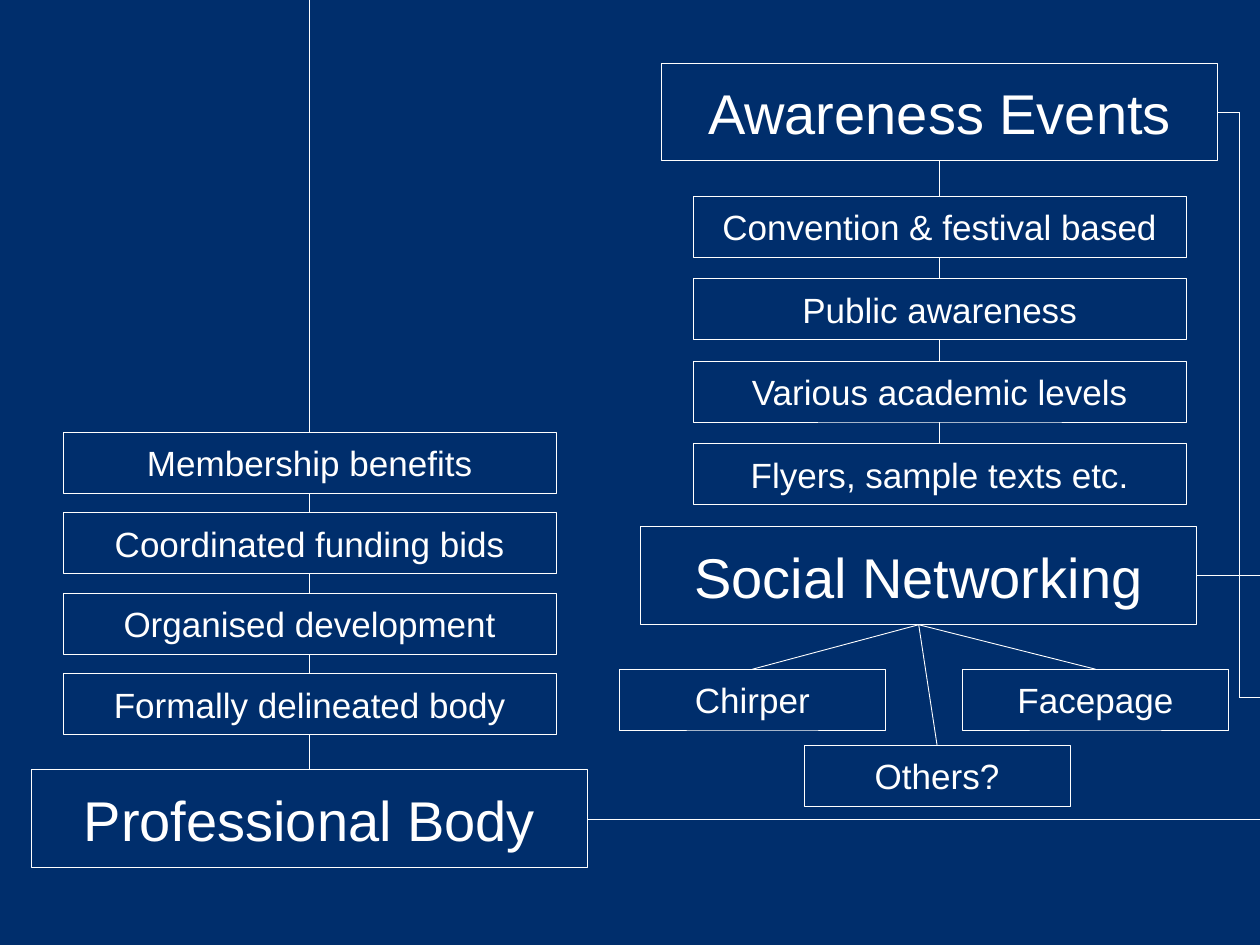
from pptx import Presentation
from pptx.dml.color import RGBColor
from pptx.enum.shapes import MSO_CONNECTOR, MSO_SHAPE
from pptx.enum.text import MSO_ANCHOR, PP_ALIGN
from pptx.oxml.ns import qn
from pptx.util import Pt
from lxml import etree

RECTANGLE = MSO_SHAPE.RECTANGLE
STRAIGHT = MSO_CONNECTOR.STRAIGHT
MIDDLE = MSO_ANCHOR.MIDDLE
CENTER = PP_ALIGN.CENTER

COLORS = {"background": "002E6C", "foreground": "FFFFFF"}
FONT = "Arial"
LINE_WIDTH = 0.5
SLIDE_WIDTH, SLIDE_HEIGHT = 720, 540
HEADING = {"width": 318, "height": 56, "size": 32}
ITEM = {"width": 282, "height": 34.8, "size": 20}
NETWORK = {"width": 152, "height": 34.8, "size": 20}
TOP_SITE, BOTTOM_SITE = 0, 2

PROFESSIONAL = ("Professional Body", 18, 440)
AWARENESS = ("Awareness Events", 378, 36)
SOCIAL = ("Social Networking", 366, 301)

BENEFITS = {
    "left": 36, "top": 247, "pitch": 46,
    "items": ["Membership benefits", "Coordinated funding bids",
              "Organised development", "Formally delineated body"],
}
EVENTS = {
    "left": 396, "top": 112.2, "pitch": 47.1,
    "items": ["Convention & festival based", "Public awareness",
              "Various academic levels", "Flyers, sample texts etc."],
}
NETWORKS = [("Chirper", 354, 382.4), ("Facepage", 550, 382.4), ("Others?", 459.5, 426)]

BRANCH_X, BRANCH_Y = 708, 398.4


def color(name):
    return RGBColor.from_string(COLORS[name])


def add_box(slide, text, left, top, style):
    shape = slide.shapes.add_shape(
        RECTANGLE, Pt(left), Pt(top), Pt(style["width"]), Pt(style["height"]))
    shape.shadow.inherit = False
    shape.fill.background()
    shape.line.color.rgb = color("foreground")
    shape.line.width = Pt(LINE_WIDTH)
    text_frame = shape.text_frame
    text_frame.text = text
    text_frame.word_wrap = True
    text_frame.vertical_anchor = MIDDLE
    paragraph = text_frame.paragraphs[0]
    paragraph.alignment = CENTER
    font = paragraph.runs[0].font
    font.name = FONT
    font.size = Pt(style["size"])
    font.color.rgb = color("foreground")
    return shape


def add_line(slide, start, end):
    connector = slide.shapes.add_connector(STRAIGHT, *map(Pt, start + end))
    connector.line.color.rgb = color("foreground")
    connector.line.width = Pt(LINE_WIDTH)
    etree.SubElement(connector._element.spPr, qn("a:effectLst"))
    return connector


def join(slide, upper, lower):
    connector = add_line(slide, (0, 0), (0, 0))
    connector.begin_connect(upper, BOTTOM_SITE)
    connector.end_connect(lower, TOP_SITE)


def add_stack(slide, stack):
    return [add_box(slide, text, stack["left"], stack["top"] + index * stack["pitch"], ITEM)
            for index, text in enumerate(stack["items"])]


def right_middle(heading):
    _, left, top = heading
    return left + HEADING["width"], top + HEADING["height"] / 2


def main():
    presentation = Presentation()
    presentation.slide_width = Pt(SLIDE_WIDTH)
    presentation.slide_height = Pt(SLIDE_HEIGHT)
    slide = presentation.slides.add_slide(presentation.slide_layouts[6])
    slide.background.fill.solid()
    slide.background.fill.fore_color.rgb = color("background")

    professional, awareness, social = [
        add_box(slide, *heading, HEADING) for heading in (PROFESSIONAL, AWARENESS, SOCIAL)]
    chains = [add_stack(slide, BENEFITS) + [professional],
              [awareness] + add_stack(slide, EVENTS)]
    for chain in chains:
        for upper, lower in zip(chain, chain[1:]):
            join(slide, upper, lower)
    for network in NETWORKS:
        join(slide, social, add_box(slide, *network, NETWORK))

    stem_x = BENEFITS["left"] + ITEM["width"] / 2
    add_line(slide, (stem_x, 0), (stem_x, BENEFITS["top"]))
    for heading in (PROFESSIONAL, SOCIAL):
        start = right_middle(heading)
        add_line(slide, start, (SLIDE_WIDTH, start[1]))

    start = right_middle(AWARENESS)
    route = [start, (BRANCH_X, start[1]), (BRANCH_X, BRANCH_Y), (SLIDE_WIDTH, BRANCH_Y)]
    for begin, end in zip(route, route[1:]):
        add_line(slide, begin, end)

    presentation.save("out.pptx")


if __name__ == "__main__":
    main()
